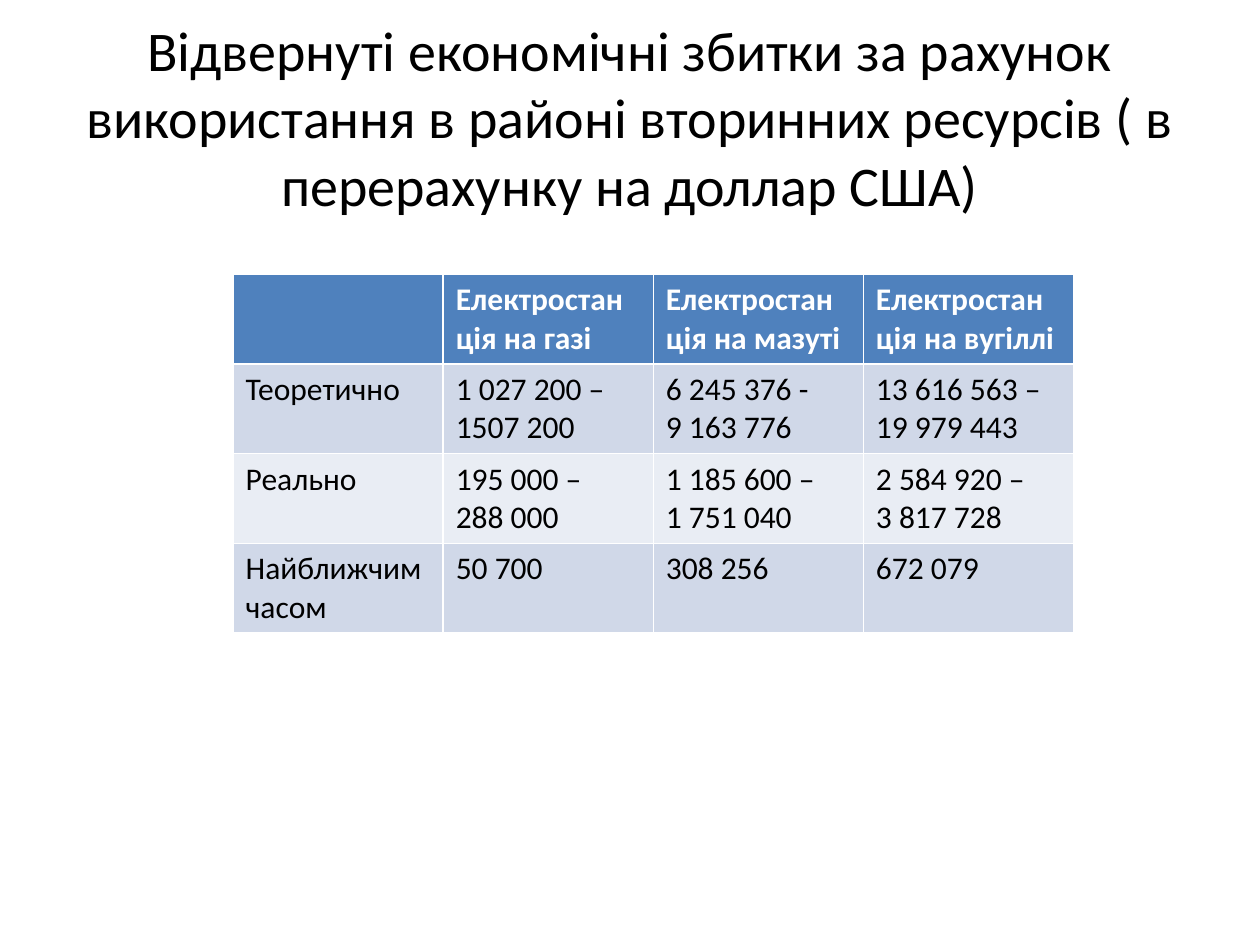
import pptx
import pptx.dml.color
import pptx.enum.text
import pptx.util

Inches = pptx.util.Inches
TITLE = ("Відвернуті економічні збитки за рахунок використання в районі "
         "вторинних ресурсів ( в перерахунку на доллар США)")
ROWS = [
    ["", "Електростанція на газі", "Електростанція на мазуті", "Електростанція на вугіллі"],
    ["Теоретично", "1 027 200 – 1507 200", "6 245 376 -\n9 163 776", "13 616 563 –\n19 979 443"],
    ["Реально", "195 000 –\n288 000", "1 185 600 –\n1 751 040", "2 584 920 –\n3 817 728"],
    ["Найближчим часом", "50 700", "308 256", "672 079"],
]
HEADER_FILL = "4F81BD"
BAND_FILLS = ["E9EDF4", "D0D8E8"]
TITLE_FORMAT = {"name": "Calibri", "size": pptx.util.Pt(32), "bold": False}
HEADER_FORMAT = {"name": "Calibri", "size": pptx.util.Pt(18), "bold": True}
BODY_FORMAT = {**HEADER_FORMAT, "bold": False}


def color(value):
    """Turn a hex string into a colour."""
    return pptx.dml.color.RGBColor.from_string(value)


def format_text(text_frame, values, text_color):
    """Apply font values and a colour to every run."""
    for paragraph in text_frame.paragraphs:
        for run in paragraph.runs:
            for name, value in values.items():
                setattr(run.font, name, value)
            run.font.color.rgb = color(text_color)


def add_title(slide, left, top, width, height):
    """Fill and place the title placeholder."""
    title = slide.shapes.title
    box = {"left": left, "top": top, "width": width, "height": height}
    for name, value in box.items():
        setattr(title, name, value)
    text_frame = title.text_frame
    text_frame.text = TITLE
    text_frame.auto_size = pptx.enum.text.MSO_AUTO_SIZE.NONE
    text_frame.vertical_anchor = pptx.enum.text.MSO_ANCHOR.MIDDLE
    text_frame.paragraphs[0].alignment = pptx.enum.text.PP_ALIGN.CENTER
    format_text(text_frame, TITLE_FORMAT, "000000")


def add_losses_table(slide, left, top, width, height):
    """Add the table of averted losses by power station type."""
    table = slide.shapes.add_table(len(ROWS), len(ROWS[0]), left, top, width, height).table
    for row_index, row in enumerate(ROWS):
        is_header = row_index == 0
        for column_index, text in enumerate(row):
            cell = table.cell(row_index, column_index)
            cell.text = text
            cell.fill.solid()
            cell.fill.fore_color.rgb = color(HEADER_FILL if is_header else BAND_FILLS[row_index % 2])
            format_text(cell.text_frame, HEADER_FORMAT if is_header else BODY_FORMAT,
                        "FFFFFF" if is_header else "000000")


def main():
    """Build and save the presentation."""
    presentation = pptx.Presentation()
    presentation.slide_width = Inches(10)
    presentation.slide_height = Inches(7.5)
    slide = presentation.slides.add_slide(presentation.slide_layouts[5])
    slide.background.fill.solid()
    slide.background.fill.fore_color.rgb = color("FFFFFF")
    add_title(slide, Inches(0.5), Inches(0.3), Inches(9), Inches(1.25))
    add_losses_table(slide, Inches(1.85), Inches(2.18), Inches(6.67), Inches(2.8))
    presentation.save("out.pptx")


if __name__ == "__main__":
    main()
